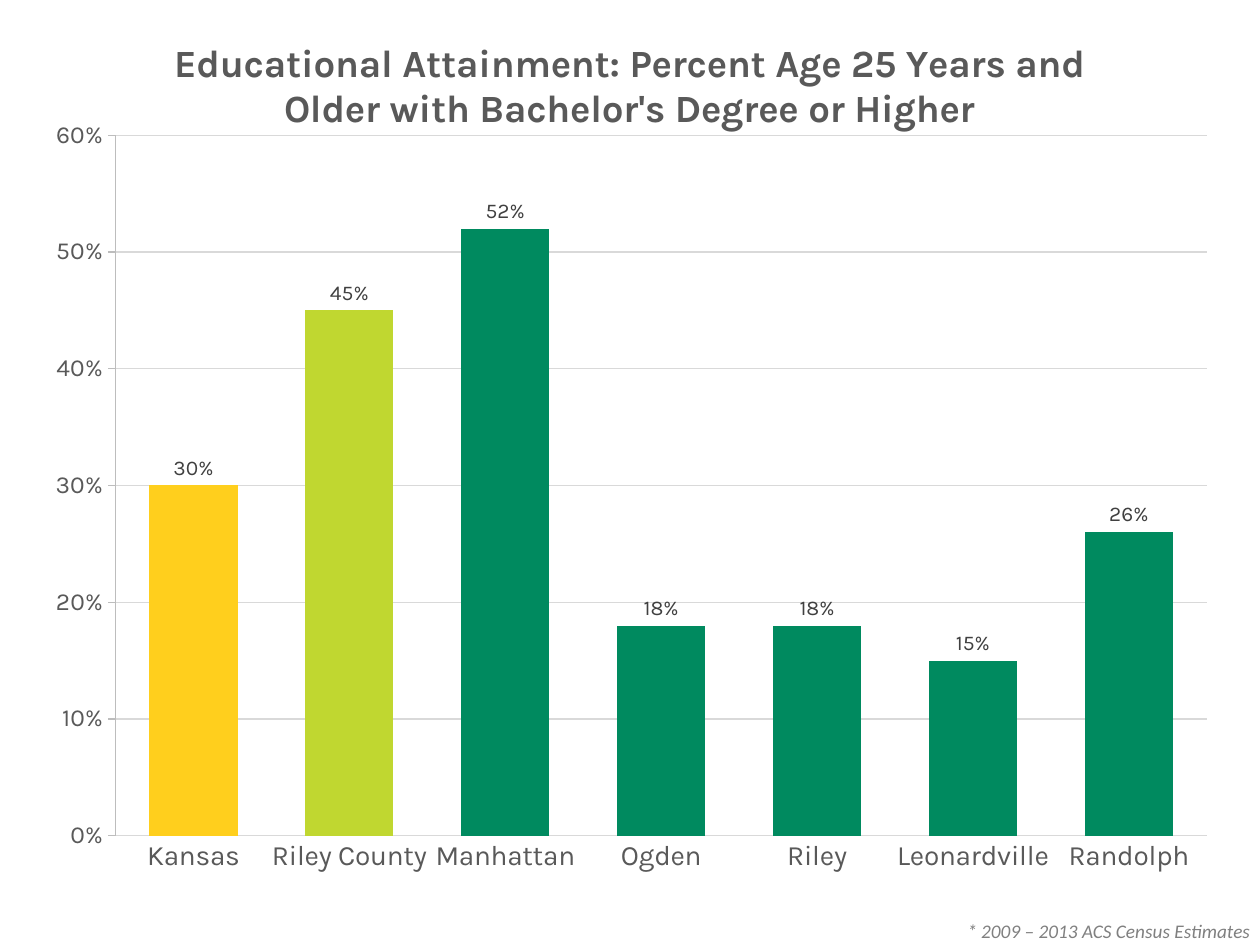
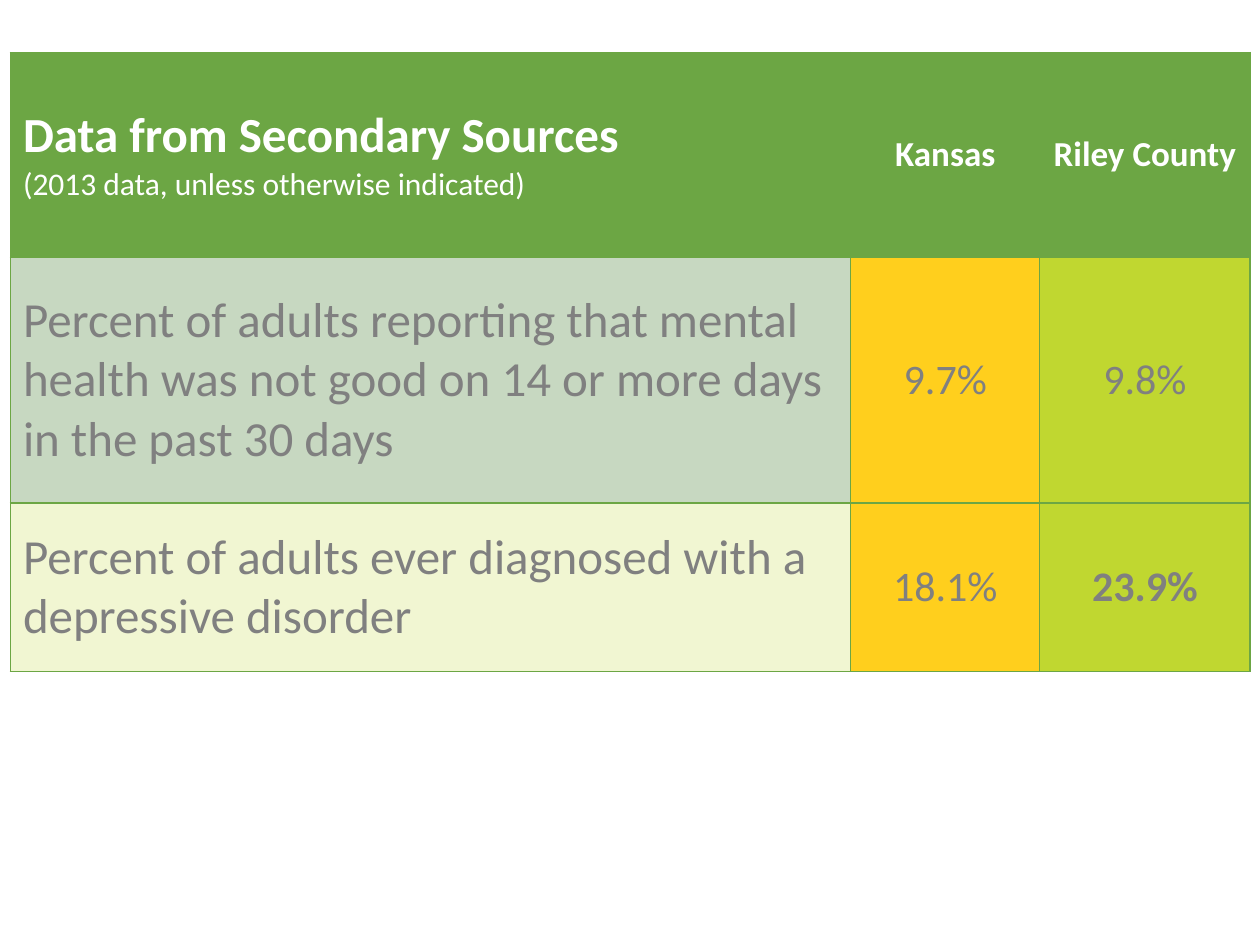
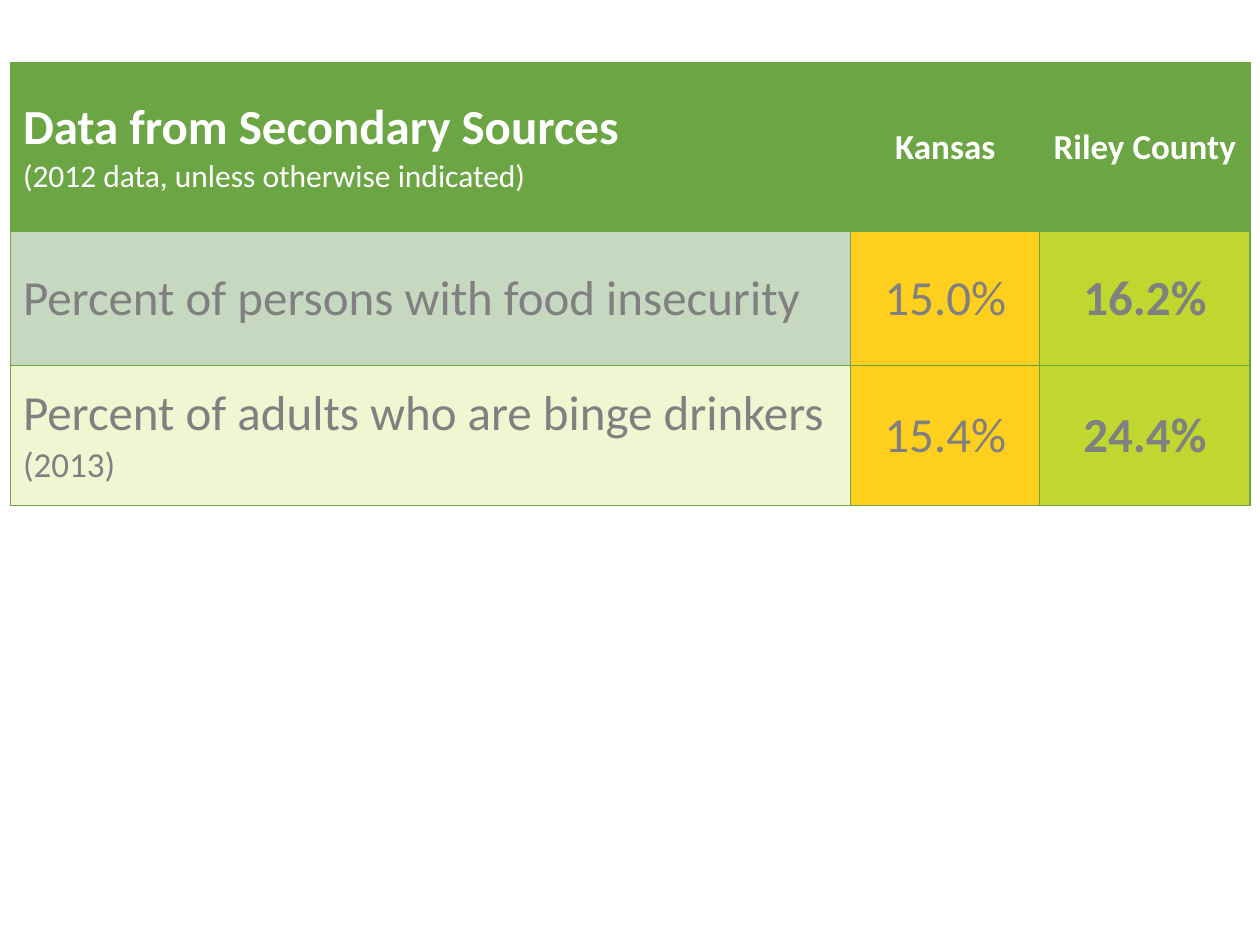
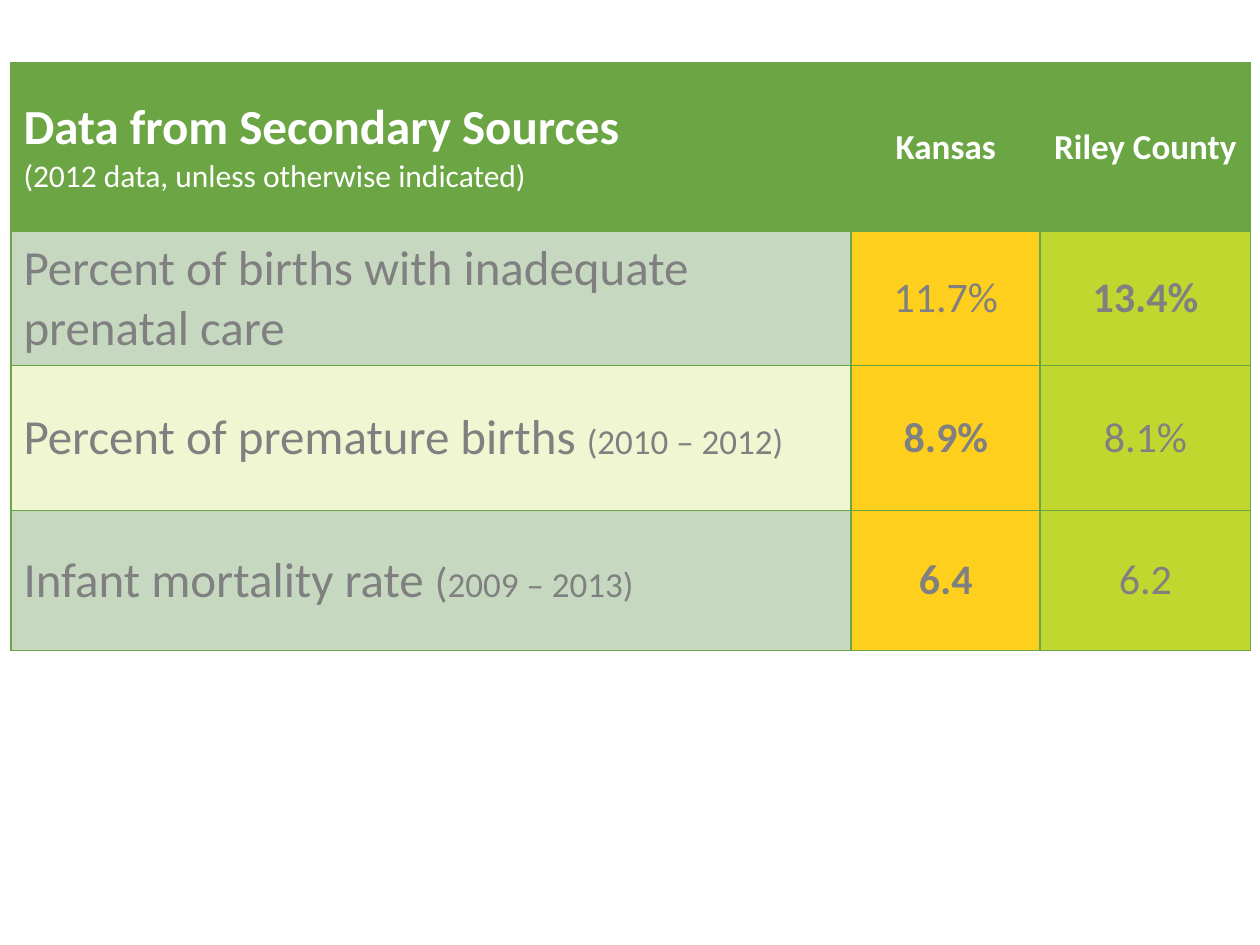
"""Build four slides on schooling and health in a county and its state."""

import dataclasses
import typing

import lxml.etree
import pptx
import pptx.chart.data
import pptx.dml.color
import pptx.enum.chart
import pptx.enum.text
import pptx.oxml.ns
import pptx.util

Cm = pptx.util.Cm
Pt = pptx.util.Pt
RGBColor = pptx.dml.color.RGBColor
ALIGN = pptx.enum.text.PP_ALIGN
qn = pptx.oxml.ns.qn

GREEN = RGBColor(0x6C, 0xA6, 0x44)
FOREST = RGBColor(0x00, 0x8A, 0x5F)
GOLD = RGBColor(0xFF, 0xCF, 0x1D)
LIME = RGBColor(0xC0, 0xD7, 0x30)
SAGE = RGBColor(0xC7, 0xD8, 0xC1)
CREAM = RGBColor(0xF1, 0xF6, 0xD2)
WHITE = RGBColor(0xFF, 0xFF, 0xFF)
BLACK = RGBColor(0x00, 0x00, 0x00)
GRAY = RGBColor(0x80, 0x80, 0x80)
SLATE = RGBColor(0x59, 0x59, 0x59)
INK = RGBColor(0x40, 0x40, 0x40)
RULE = RGBColor(0xD9, 0xD9, 0xD9)
EDGE = RGBColor(0xBD, 0xBD, 0xBD)

BODY = "Calibri"
HEAD = "Karla"
WIDTHS = (16.94, 3.81, 4.24)
WIDE, TALL = 25.4, 18.85


@dataclasses.dataclass(frozen=True)
class Run:
    """A piece of text with its size and weight."""

    text: str
    size: float = 28
    bold: bool = False


@dataclasses.dataclass(frozen=True)
class Row:
    """A measure with its state and county values."""

    height: float
    label: tuple[Run, ...]
    state: Run
    county: Run


@dataclasses.dataclass(frozen=True)
class Sheet:
    """A table slide: place, year, header height and rows."""

    left: float
    top: float
    year: int
    height: float
    rows: tuple[Row, ...]


@dataclasses.dataclass(frozen=True)
class Bar:
    """A column of the chart."""

    name: str
    value: float
    color: RGBColor = FOREST


BARS = (
    Bar("Kansas", 0.30, GOLD),
    Bar("Riley County", 0.45, LIME),
    Bar("Manhattan", 0.52),
    Bar("Ogden", 0.18),
    Bar("Riley", 0.18),
    Bar("Leonardville", 0.15),
    Bar("Randolph", 0.26),
)

SHEETS = (
    Sheet(0.21, 1.06, 2013, 4.13, (
        Row(4.95, (Run("Percent of adults reporting that mental health was not good "
                       "on 14 or more days in the past 30 days"),),
            Run("9.7%", 24), Run("9.8%", 24)),
        Row(3.4, (Run("Percent of adults ever diagnosed with a depressive disorder"),),
            Run("18.1%", 24), Run("23.9%", 24, True)),
    )),
    Sheet(0.21, 1.27, 2012, 3.39, (
        Row(2.71, (Run("Percent of persons with food insecurity"),),
            Run("15.0%"), Run("16.2%", bold=True)),
        Row(2.82, (Run("Percent of adults who are binge drinkers "), Run("(2013)", 20)),
            Run("15.4%"), Run("24.4%", bold=True)),
    )),
    Sheet(0.22, 1.27, 2012, 3.39, (
        Row(2.71, (Run("Percent of births with inadequate prenatal care"),),
            Run("11.7%", 24), Run("13.4%", 24, True)),
        Row(2.92, (Run("Percent of premature births "), Run("(2010 – 2012)", 20)),
            Run("8.9%", 24, True), Run("8.1%", 24)),
        Row(2.82, (Run("Infant mortality rate "), Run("(", 24), Run("2009 – 2013)", 20)),
            Run("6.4", 24, True), Run("6.2", 24)),
    )),
)


def style(font: typing.Any, *, size: float, color: RGBColor, face: str = BODY,
          bold: bool = False, italic: bool = False) -> None:
    """Set the look of a font."""
    font.name, font.size, font.bold, font.italic = face, Pt(size), bold, italic
    font.color.rgb = color


def write(para: typing.Any, text: str, **look: typing.Any) -> None:
    """Add a run of text in the given format."""
    run = para.add_run()
    run.text = text
    style(run.font, **look)


def border(cell: typing.Any) -> None:
    """Draw a thin green line on each side of a cell."""
    props = cell._tc.get_or_add_tcPr()
    for spot, side in enumerate(("a:lnL", "a:lnR", "a:lnT", "a:lnB")):
        line = lxml.etree.Element(qn(side), w=str(Pt(1)))
        fill = lxml.etree.SubElement(line, qn("a:solidFill"))
        lxml.etree.SubElement(fill, qn("a:srgbClr"), val=str(GREEN))
        props.insert(spot, line)


def fill_cell(cell: typing.Any, paras: typing.Sequence[typing.Sequence[Run]],
              back: RGBColor, color: RGBColor, align: ALIGN) -> None:
    """Fill a cell with colour, borders and its paragraphs."""
    cell.fill.solid()
    cell.fill.fore_color.rgb = back
    border(cell)
    cell.vertical_anchor = pptx.enum.text.MSO_ANCHOR.MIDDLE
    frame = cell.text_frame
    for spot, runs in enumerate(paras):
        para = frame.add_paragraph() if spot else frame.paragraphs[0]
        para.alignment = align
        for run in runs:
            write(para, run.text, size=run.size, color=color, bold=run.bold)


def draw_sheet(slide: typing.Any, sheet: Sheet) -> None:
    """Draw the table of one sheet."""
    heights = [sheet.height] + [row.height for row in sheet.rows]
    table = slide.shapes.add_table(
        len(heights), len(WIDTHS), Cm(sheet.left), Cm(sheet.top),
        Cm(sum(WIDTHS)), Cm(sum(heights))).table
    table.first_row = table.horz_banding = False
    for column, width in zip(table.columns, WIDTHS):
        column.width = Cm(width)
    for line, height in zip(table.rows, heights):
        line.height = Cm(height)

    title = ((Run("Data from Secondary Sources", bold=True),),
             (Run(f"({sheet.year} data, unless otherwise indicated)", 18),))
    heads = (title, ((Run("Kansas", 20, True),),), ((Run("Riley County", 20, True),),))
    aligns = (ALIGN.LEFT, ALIGN.CENTER, ALIGN.CENTER)
    for spot, (paras, align) in enumerate(zip(heads, aligns)):
        fill_cell(table.cell(0, spot), paras, GREEN, WHITE, align)
    for level, row in enumerate(sheet.rows, 1):
        backs = (SAGE if level % 2 else CREAM, GOLD, LIME)
        parts = (row.label, (row.state,), (row.county,))
        for spot, (runs, back, align) in enumerate(zip(parts, backs, aligns)):
            fill_cell(table.cell(level, spot), (runs,), back, GRAY, align)


def place(owner: typing.Any, **spots: float) -> None:
    """Fix a chart part at a place given in centimetres."""
    layout = owner.find(qn("c:layout"))
    if layout is None:
        layout = lxml.etree.Element(qn("c:layout"))
        owner.insert(1 if owner.tag == qn("c:title") else 0, layout)
    for child in list(layout):
        layout.remove(child)
    manual = lxml.etree.SubElement(layout, qn("c:manualLayout"))
    if "w" in spots:
        lxml.etree.SubElement(manual, qn("c:layoutTarget"), val="inner")
    for key in ("x", "y"):
        lxml.etree.SubElement(manual, qn(f"c:{key}Mode"), val="edge")
    for key, value in spots.items():
        share = value / (WIDE if key in "xw" else TALL)
        lxml.etree.SubElement(manual, qn(f"c:{key}"), val=str(share))


def draw_line(line: typing.Any, color: RGBColor) -> None:
    """Set a fine chart line."""
    line.color.rgb = color
    line.width = Pt(0.75)


def draw_chart(slide: typing.Any) -> None:
    """Draw the column chart."""
    data = pptx.chart.data.CategoryChartData(number_format="0%")
    data.categories = [bar.name for bar in BARS]
    data.add_series("Series 1", [bar.value for bar in BARS])
    chart = slide.shapes.add_chart(
        pptx.enum.chart.XL_CHART_TYPE.COLUMN_CLUSTERED,
        Cm(0), Cm(0.2), Cm(WIDE), Cm(TALL), data).chart
    style(chart.font, size=10, color=BLACK)
    chart.has_legend = False
    chart.has_title = True
    title = chart.chart_title
    write(title.text_frame.paragraphs[0],
          "Educational Attainment: Percent Age 25 Years and Older "
          "with Bachelor's Degree or Higher",
          size=22, color=SLATE, face=HEAD, bold=True)
    title.include_in_layout = False
    place(title._element, x=3.37, y=0.42)
    place(chart._chartSpace.chart.plotArea, x=2.33, y=2.53, w=22, h=14.12)

    marks = pptx.enum.chart.XL_TICK_MARK
    for axis, size, mark, color in (
            (chart.category_axis, 16, marks.NONE, RULE),
            (chart.value_axis, 14, marks.OUTSIDE, EDGE)):
        style(axis.tick_labels.font, size=size, color=SLATE, face=HEAD)
        axis.major_tick_mark, axis.minor_tick_mark = mark, marks.NONE
        draw_line(axis.format.line, color)
    scale = chart.value_axis
    scale.minimum_scale, scale.maximum_scale, scale.major_unit = 0, 0.6, 0.1
    scale.tick_labels.number_format = "0%"
    scale.tick_labels.number_format_is_linked = False
    draw_line(scale.major_gridlines.format.line, RULE)

    plot = chart.plots[0]
    plot.gap_width = 77
    plot.vary_by_categories = False
    series = plot.series[0]
    series.invert_if_negative = False
    for spot, bar in enumerate(BARS):
        fill = series.points[spot].format.fill
        fill.solid()
        fill.fore_color.rgb = bar.color
    labels = series.data_labels
    labels.show_value = True
    labels.number_format, labels.number_format_is_linked = "0%", False
    labels.position = pptx.enum.chart.XL_LABEL_POSITION.OUTSIDE_END
    style(labels.font, size=12, color=INK, face=HEAD)


def draw_note(slide: typing.Any) -> None:
    """Draw the note on the data source on a single line."""
    frame = slide.shapes.add_textbox(Cm(19.25), Cm(18.41), Cm(6.15), Cm(0.64)).text_frame
    frame.word_wrap = False
    frame.margin_right = Cm(0)
    write(frame.paragraphs[0], "* 2009 – 2013 ACS Census Estimates",
          size=11, color=GRAY, italic=True)


def main() -> None:
    """Build and save the deck."""
    deck = pptx.Presentation()
    deck.slide_width, deck.slide_height = Cm(25.4), Cm(19.05)
    blank = deck.slide_layouts[6]
    first = deck.slides.add_slide(blank)
    draw_note(first)
    draw_chart(first)
    for sheet in SHEETS:
        draw_sheet(deck.slides.add_slide(blank), sheet)
    deck.save("out.pptx")


if __name__ == "__main__":
    main()
